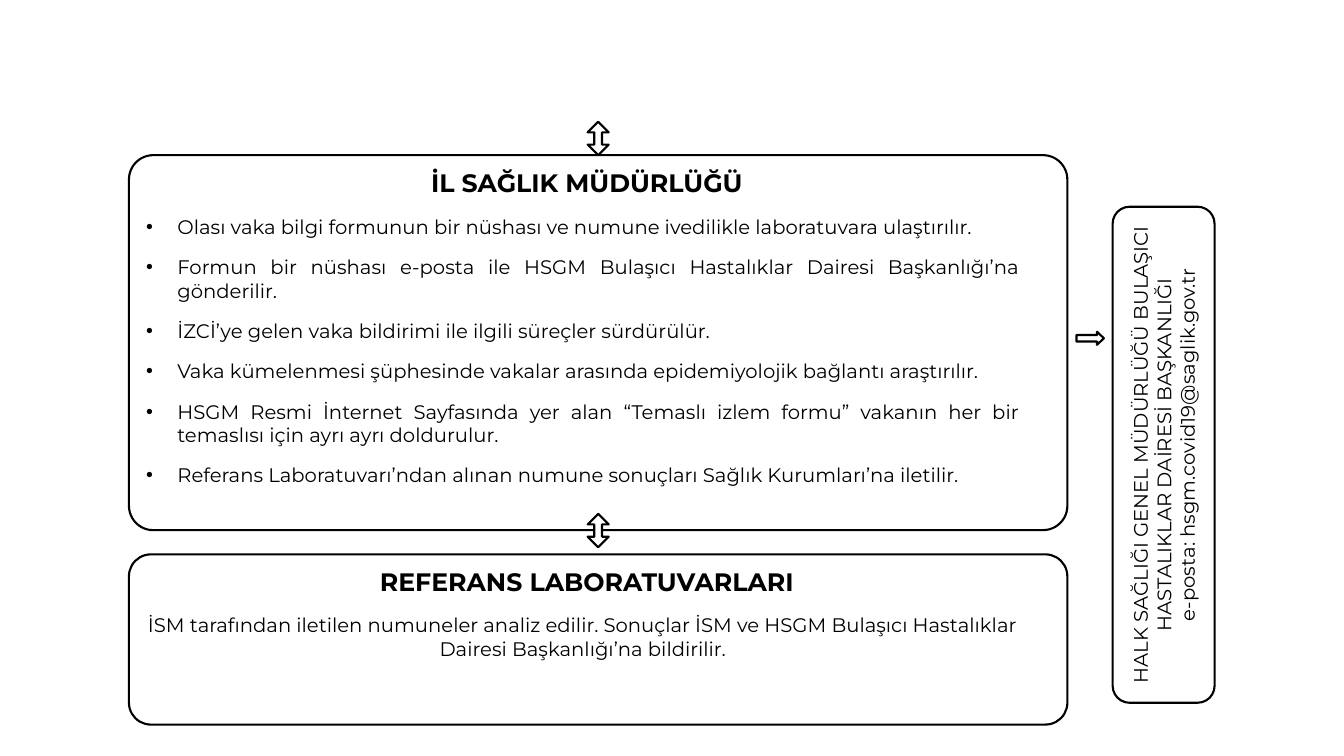
"""Build the slide on the provincial health directorate and the reference laboratories."""
from dataclasses import dataclass

from lxml import etree
from pptx import Presentation
from pptx.dml.color import RGBColor
from pptx.enum.shapes import MSO_SHAPE
from pptx.enum.text import MSO_ANCHOR, MSO_AUTO_SIZE, PP_ALIGN
from pptx.oxml.ns import qn
from pptx.util import Cm, Pt

ROUNDED = MSO_SHAPE.ROUNDED_RECTANGLE
UP_DOWN = MSO_SHAPE.UP_DOWN_ARROW
RIGHT = MSO_SHAPE.RIGHT_ARROW
CENTER, JUSTIFY = PP_ALIGN.CENTER, PP_ALIGN.JUSTIFY
TOP, MIDDLE = MSO_ANCHOR.TOP, MSO_ANCHOR.MIDDLE
NO_AUTOFIT = MSO_AUTO_SIZE.NONE
FONT = "Montserrat"
BLACK, WHITE = "000000", "FFFFFF"


@dataclass
class Box:
    left: float
    top: float
    width: float
    height: float


@dataclass
class Outline:
    preset: MSO_SHAPE
    box: Box
    adjustments: tuple
    fill: str = ""


@dataclass
class Line:
    text: str
    size: int = 14
    bold: bool = False
    align: PP_ALIGN = CENTER
    margin: float = 0
    bullet: bool = False
    before: int = 0


def color(value: str) -> RGBColor:
    """Turn a hex string into a colour."""
    return RGBColor.from_string(value)


def draw_outline(slide, outline: Outline):
    """Draw one black-edged preset shape."""
    box = outline.box
    shape = slide.shapes.add_shape(
        outline.preset, Cm(box.left), Cm(box.top), Cm(box.width), Cm(box.height))
    shape.shadow.inherit = False
    for index, value in enumerate(outline.adjustments):
        shape.adjustments[index] = value
    if outline.fill:
        shape.fill.solid()
        shape.fill.fore_color.rgb = color(outline.fill)
    else:
        shape.fill.background()
    shape.line.color.rgb = color(BLACK)
    shape.line.width = Pt(1.5)
    return shape


def write_lines(shape, lines: list, anchor: MSO_ANCHOR, insets: tuple) -> None:
    """Fill a shape with paragraphs; insets are left, top, right and bottom."""
    frame = shape.text_frame
    frame.word_wrap = True
    frame.auto_size = NO_AUTOFIT
    frame.vertical_anchor = anchor
    frame.margin_left, frame.margin_top, frame.margin_right, frame.margin_bottom = map(Cm, insets)
    for index, line in enumerate(lines):
        paragraph = frame.paragraphs[0] if index == 0 else frame.add_paragraph()
        paragraph.alignment = line.align
        paragraph.space_before = Pt(line.before if index else 0)
        properties = paragraph._p.get_or_add_pPr()
        properties.set("marL", str(Cm(line.margin)))
        properties.set("indent", str(-Cm(line.margin) if line.bullet else 0))
        if line.bullet:
            etree.SubElement(properties, qn("a:buFont")).set("typeface", "Arial")
            etree.SubElement(properties, qn("a:buChar")).set("char", "•")
        run = paragraph.add_run()
        run.text = line.text
        run.font.name = FONT
        run.font.size = Pt(line.size)
        run.font.bold = line.bold
        run.font.color.rgb = color(BLACK)


def heading(text: str) -> Line:
    """Describe the heading of a unit."""
    return Line(text, size=18, bold=True, margin=0.2)


def place(shape, box: Box) -> None:
    """Move a placeholder to its box."""
    shape.left, shape.top = Cm(box.left), Cm(box.top)
    shape.width, shape.height = Cm(box.width), Cm(box.height)


DUTIES = [
    "Olası vaka bilgi formunun bir nüshası ve numune ivedilikle laboratuvara ulaştırılır.",
    "Formun bir nüshası e-posta ile HSGM Bulaşıcı Hastalıklar Dairesi Başkanlığı’na gönderilir.",
    "İZCİ’ye gelen vaka bildirimi ile ilgili süreçler sürdürülür.",
    "Vaka kümelenmesi şüphesinde vakalar arasında epidemiyolojik bağlantı araştırılır.",
    "HSGM Resmi İnternet Sayfasında yer alan “Temaslı izlem formu” vakanın her bir "
    "temaslısı için ayrı ayrı doldurulur.",
    "Referans Laboratuvarı’ndan alınan numune sonuçları Sağlık Kurumları’na iletilir.",
]
LABORATORY_LINES = [
    heading("REFERANS LABORATUVARLARI"),
    Line("İSM tarafından iletilen numuneler analiz edilir. Sonuçlar İSM ve HSGM Bulaşıcı "
         "Hastalıklar Dairesi Başkanlığı’na bildirilir.", before=12),
]
CONTACT_LINES = [
    Line("HALK SAĞLIĞI GENEL MÜDÜRLÜĞÜ BULAŞICI HASTALIKLAR DAİRESİ BAŞKANLIĞI"),
    Line("e-posta: hsgm.covid19@saglik.gov.tr", margin=0.5),
]
DIRECTORATE = Outline(ROUNDED, Box(3.25, 3.91, 23.65, 9.45), (0.065,))
LABORATORY = Outline(ROUNDED, Box(3.25, 13.97, 23.65, 4.29), (0.129,))
CONTACT = Outline(ROUNDED, Box(28.04, 5.21, 2.57, 12.5), (0.167,))
TO_CONTACT = Outline(RIGHT, Box(27.13, 8.36, 0.69, 0.33), (0.5, 0.523), WHITE)
EXCHANGES = [Outline(UP_DOWN, Box(14.81, top, 0.53, 0.84), (0.5, 0.369), WHITE)
             for top in (3.07, 12.95)]


def main() -> None:
    """Build and save the slide."""
    presentation = Presentation()
    presentation.slide_width, presentation.slide_height = Cm(33.87), Cm(19.05)
    slide = presentation.slides.add_slide(presentation.slide_layouts[1])

    directorate_title, duty_list = slide.placeholders
    place(directorate_title, Box(3.68, 4.22, 22.02, 0.78))
    write_lines(directorate_title, [heading("İL SAĞLIK MÜDÜRLÜĞÜ")], TOP, (0, 0, 0, 0))
    place(duty_list, Box(3.68, 5.41, 22.02, 7.3))
    duties = [Line(text, align=JUSTIFY, margin=0.79, bullet=True, before=12) for text in DUTIES]
    write_lines(duty_list, duties, TOP, (0, 0, 0, 0))

    draw_outline(slide, DIRECTORATE)
    draw_outline(slide, TO_CONTACT)
    laboratory = draw_outline(slide, LABORATORY)
    write_lines(laboratory, LABORATORY_LINES, TOP, (0.25, 0.13, 1.02, 0.13))
    for exchange in EXCHANGES:
        draw_outline(slide, exchange)
    contact = draw_outline(slide, CONTACT)
    write_lines(contact, CONTACT_LINES, MIDDLE, (0.25, 0.13, 0.25, 0.13))
    contact.text_frame._txBody.bodyPr.set("vert", "vert270")

    presentation.save("out.pptx")


if __name__ == "__main__":
    main()
